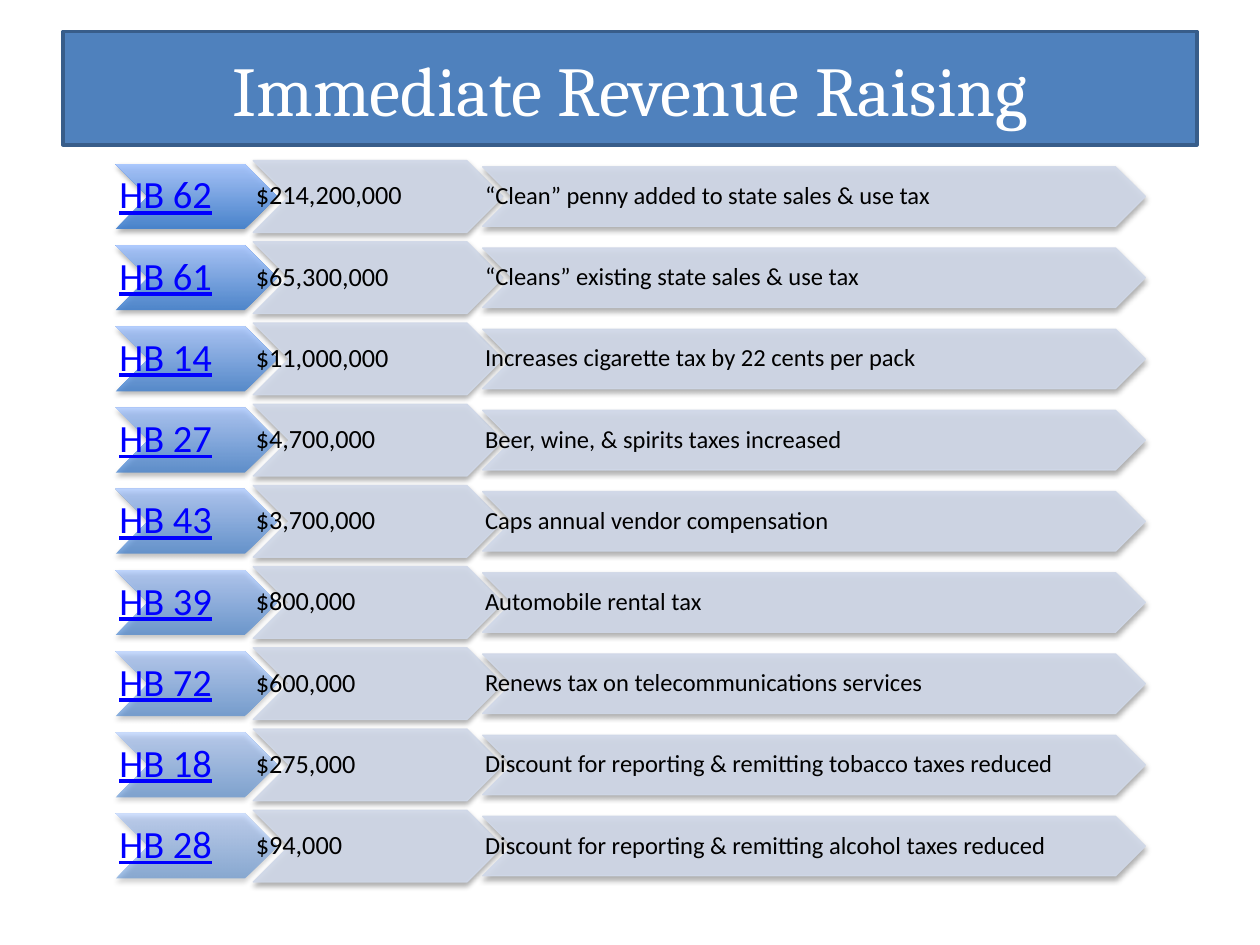
from dataclasses import dataclass

from lxml import etree
from pptx import Presentation
from pptx.dml.color import RGBColor
from pptx.enum.shapes import MSO_SHAPE
from pptx.enum.text import MSO_ANCHOR, PP_ALIGN
from pptx.oxml.ns import qn
from pptx.util import Pt

CHEVRON = MSO_SHAPE.CHEVRON
MIDDLE = MSO_ANCHOR.MIDDLE
CENTER = PP_ALIGN.CENTER

COLORS = {
    "banner": "4F81BD",
    "banner_edge": "385D8A",
    "title": "FFFFFF",
    "bill_bottom": "3F7FCE",
    "bill_top": "A4C4FF",
    "detail": "D0D8E8",
    "link": "0000FF",
    "text": "000000",
}

FIRST_CENTER = 112.3
ROW_PITCH = 46.4


@dataclass(frozen=True)
class Column:
    left: float
    width: float
    height: float
    size: float
    inset_left: float
    inset_edge: float
    is_bill: bool = False


@dataclass(frozen=True)
class Bill:
    number: str
    revenue: str
    purpose: str


COLUMNS = (
    Column(66.2, 92.2, 37, 22, 2, 1.1, True),
    Column(144.7, 142.6, 41, 15, 1.5, 0.75),
    Column(275.8, 378.7, 34, 14, 1.4, 0.7),
)

BILLS = (
    Bill("HB 62", "$214,200,000", "“Clean” penny added to state sales & use tax"),
    Bill("HB 61", "$65,300,000", "“Cleans” existing state sales & use tax"),
    Bill("HB 14", "$11,000,000", "Increases cigarette tax by 22 cents per pack"),
    Bill("HB 27", "$4,700,000", "Beer, wine, & spirits taxes increased"),
    Bill("HB 43", "$3,700,000", "Caps annual vendor compensation"),
    Bill("HB 39", "$800,000", "Automobile rental tax"),
    Bill("HB 72", "$600,000", "Renews tax on telecommunications services"),
    Bill("HB 18", "$275,000", "Discount for reporting & remitting tobacco taxes reduced"),
    Bill("HB 28", "$94,000", "Discount for reporting & remitting alcohol taxes reduced"),
)


def rgb(name: str) -> RGBColor:
    return RGBColor.from_string(COLORS[name])


def set_opacity(properties, percent: int) -> None:
    for color in properties.iter(qn("a:srgbClr")):
        etree.SubElement(color, qn("a:alpha"), val=str(percent * 1000))


def add_shadow(shape) -> None:
    shape.shadow.inherit = False
    effects = shape.element.spPr.find(qn("a:effectLst"))
    shadow = etree.SubElement(
        effects, qn("a:outerShdw"), blurRad=str(Pt(3.1)), dist=str(Pt(1.8)),
        dir="5400000", rotWithShape="0",
    )
    color = etree.SubElement(shadow, qn("a:srgbClr"), val=COLORS["text"])
    etree.SubElement(color, qn("a:alpha"), val="35000")


def style_run(para, size: float, font: str, color: str) -> None:
    for span in para.runs:
        span.font.size = Pt(size)
        span.font.name = font
        span.font.color.rgb = rgb(color)


def add_title(page, text: str) -> None:
    box = page.shapes.add_textbox(Pt(36), Pt(18), Pt(648), Pt(64.8))
    box.fill.solid()
    box.fill.fore_color.rgb = rgb("banner")
    box.line.color.rgb = rgb("banner_edge")
    box.line.width = Pt(2)
    frame = box.text_frame
    frame.word_wrap = True
    frame.vertical_anchor = MIDDLE
    frame.text = text
    para = frame.paragraphs[0]
    para.alignment = CENTER
    style_run(para, 40, "Cambria", "title")


def add_chevron(page, column: Column, top: float, opacity: int) -> None:
    chevron = page.shapes.add_shape(
        CHEVRON, Pt(column.left), Pt(top), Pt(column.width), Pt(column.height)
    )
    if column.is_bill:
        chevron.fill.gradient()
        chevron.fill.gradient_angle = 90
        for stop, name in zip(chevron.fill.gradient_stops, ("bill_bottom", "bill_top")):
            stop.color.rgb = rgb(name)
        chevron.line.fill.background()
    else:
        chevron.fill.solid()
        chevron.fill.fore_color.rgb = rgb("detail")
        chevron.line.color.rgb = rgb("detail")
        chevron.line.width = Pt(0.75)
    set_opacity(chevron.element.spPr, opacity)
    add_shadow(chevron)


def add_label(page, column: Column, top: float, text: str) -> None:
    box = page.shapes.add_textbox(
        Pt(column.left), Pt(top), Pt(column.width), Pt(column.height)
    )
    frame = box.text_frame
    frame.word_wrap = True
    frame.vertical_anchor = MIDDLE
    frame.margin_left = Pt(column.inset_left)
    frame.margin_right = Pt(0)
    frame.margin_top = frame.margin_bottom = Pt(column.inset_edge)
    frame.text = text
    para = frame.paragraphs[0]
    para.line_spacing = 0.9
    para.space_after = Pt(round(column.size * 0.35, 1))
    style_run(para, column.size, "Calibri", "link" if column.is_bill else "text")
    if column.is_bill:
        para.runs[0].font.underline = True


def add_bill(page, row: int, bill: Bill) -> None:
    center = FIRST_CENTER + row * ROW_PITCH
    for column, text in zip(COLUMNS, (bill.number, bill.revenue, bill.purpose)):
        top = center - column.height / 2
        opacity = 90 - 5 * row if column.is_bill else 90
        add_chevron(page, column, top, opacity)
        add_label(page, column, top, text)


def main() -> None:
    deck = Presentation()
    deck.slide_width = Pt(720)
    deck.slide_height = Pt(540)
    page = deck.slides.add_slide(deck.slide_layouts[6])
    add_title(page, "Immediate Revenue Raising")
    for row, bill in enumerate(BILLS):
        add_bill(page, row, bill)
    deck.save("out.pptx")


if __name__ == "__main__":
    main()
